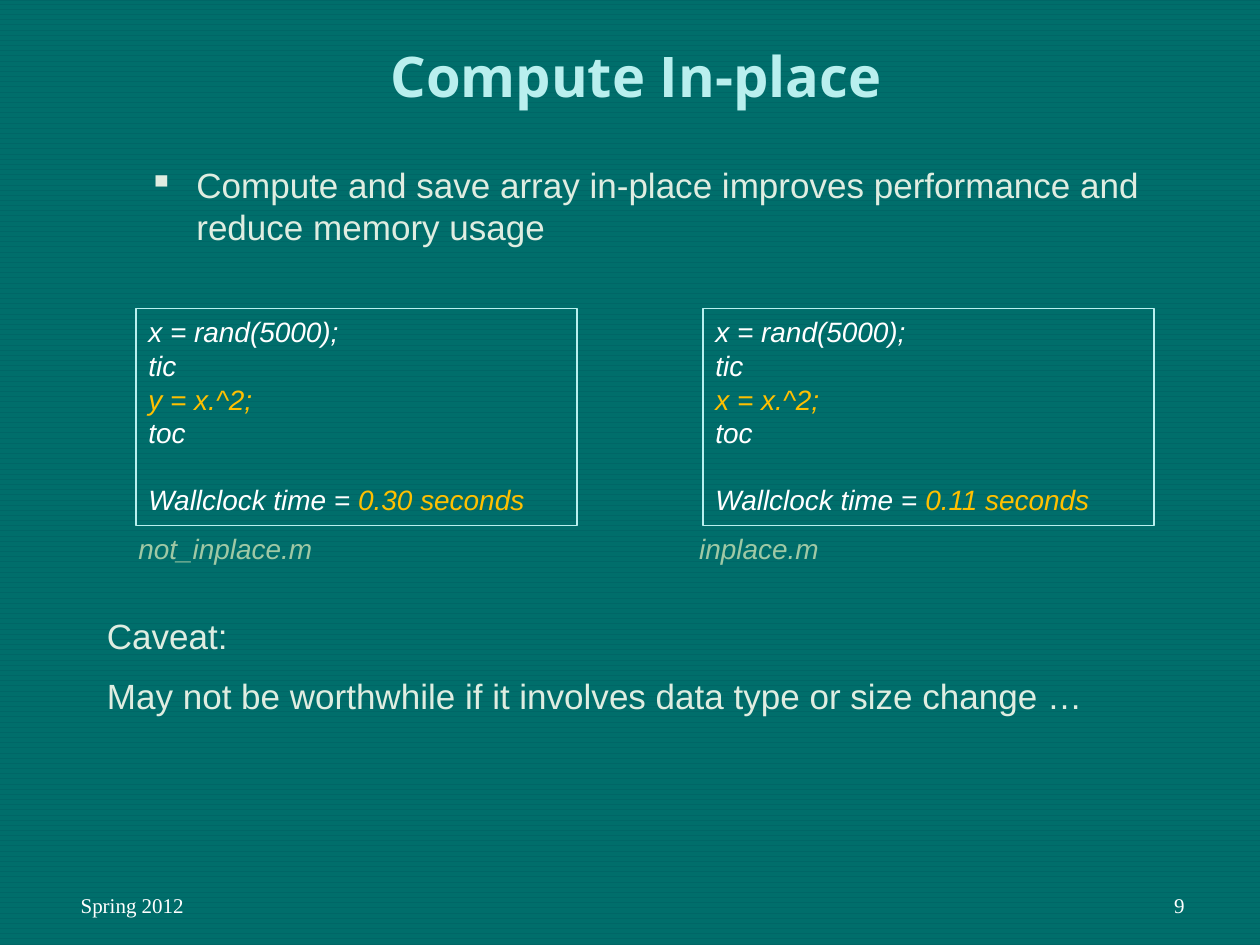
from pptx import Presentation
from pptx.dml.color import RGBColor
from pptx.enum.dml import MSO_PATTERN
from pptx.enum.shapes import MSO_SHAPE
from pptx.enum.text import MSO_ANCHOR, PP_ALIGN
from pptx.oxml.ns import qn
from pptx.util import Inches, Pt
from lxml.etree import SubElement

COLORS = {
    "stripe": "006E6B", "ground": "006666", "title": "B9EFEE", "body": "DFEDE1",
    "code": "FFFFFF", "accent": "FFC000", "caption": "9FC8A5",
}


def rgb(name):
    return RGBColor.from_string(COLORS[name])


def set_font(target, size, color, name="Arial", bold=False, italic=False):
    font = target.font
    font.size, font.name = Pt(size), name
    font.bold, font.italic = bold, italic
    font.color.rgb = rgb(color)


def add_frame(slide, left, top, width, height, anchor=MSO_ANCHOR.TOP):
    """Add a wrapping text box and return its text frame."""
    box = slide.shapes.add_textbox(Inches(left), Inches(top), Inches(width), Inches(height))
    frame = box.text_frame
    frame.word_wrap = True
    frame.vertical_anchor = anchor
    return frame


def add_title(slide, left, top, width, height):
    title = add_frame(slide, left, top, width, height).paragraphs[0]
    title.text = "Compute In-place"
    set_font(title, 32, "title", "Open Sans", bold=True)


def add_key_point(slide, left, top, width, height):
    point = add_frame(slide, left, top, width, height).paragraphs[0]
    point.text = "Compute and save array in-place improves performance and reduce memory usage"
    props = point._p.get_or_add_pPr()
    indent = Inches(0.38)
    props.set("marL", str(indent))
    props.set("indent", str(-indent))
    bullet_color = SubElement(props, qn("a:buClr"))
    SubElement(bullet_color, qn("a:srgbClr"), val=COLORS["body"])
    SubElement(props, qn("a:buChar"), char="▪")
    set_font(point, 20, "body")


def add_code_panel(slide, left, top, width, height, statement, seconds):
    panel = slide.shapes.add_shape(
        MSO_SHAPE.RECTANGLE, Inches(left), Inches(top), Inches(width), Inches(height))
    panel.shadow.inherit = False
    panel.fill.background()
    panel.line.color.rgb = rgb("title")
    panel.line.width = Pt(0.75)
    frame = panel.text_frame
    frame.word_wrap = True
    frame.vertical_anchor = MSO_ANCHOR.TOP

    # Code lines, with the timed statement highlighted
    frame.text = "\n".join(["x = rand(5000);", "tic", statement, "toc"])
    for line in frame.paragraphs:
        line.alignment = PP_ALIGN.LEFT
        set_font(line, 16, "accent" if line.text == statement else "code", italic=True)

    # Timing result, one line below the code
    timing = frame.add_paragraph()
    timing.alignment = PP_ALIGN.LEFT
    timing.space_before = Pt(19)
    for text, color in (("Wallclock time = ", "code"), (seconds, "accent")):
        run = timing.add_run()
        run.text = text
        set_font(run, 16, color, italic=True)


def add_file_names(slide, left, top, width, height):
    names = add_frame(slide, left, top, width, height).paragraphs[0]
    names.text = "not_inplace.m\tinplace.m"
    tabs = SubElement(names._p.get_or_add_pPr(), qn("a:tabLst"))
    SubElement(tabs, qn("a:tab"), pos=str(Inches(4.45)), algn="l")
    set_font(names, 16, "caption", italic=True)


def add_caveat(slide, left, top, width, height):
    frame = add_frame(slide, left, top, width, height)
    frame.text = "Caveat:\nMay not be worthwhile if it involves data type or size change …"
    for line in frame.paragraphs:
        set_font(line, 20, "body")
    frame.paragraphs[1].space_before = Pt(10)


def add_footer(slide, left, top, width, height):
    part_width = 2.33
    parts = (
        (left, "Spring 2012", PP_ALIGN.LEFT),
        (left + width - part_width, "9", PP_ALIGN.RIGHT),
    )
    for part_left, text, alignment in parts:
        frame = add_frame(slide, part_left, top, part_width, height, MSO_ANCHOR.BOTTOM)
        frame.margin_left = Inches(0.14)
        entry = frame.paragraphs[0]
        entry.text = text
        entry.alignment = alignment
        set_font(entry, 12, "code", "Times New Roman")


def main():
    deck = Presentation()
    deck.slide_width, deck.slide_height = Inches(10), Inches(7.5)
    slide = deck.slides.add_slide(deck.slide_layouts[6])

    # Striped background
    ground = slide.background.fill
    ground.patterned()
    ground.pattern = MSO_PATTERN.DARK_HORIZONTAL
    ground.fore_color.rgb = rgb("stripe")
    ground.back_color.rgb = rgb("ground")

    add_footer(slide, 0.5, 6.83, 9, 0.5)
    add_key_point(slide, 1.08, 1.25, 8.25, 0.83)
    add_title(slide, 3, 0.28, 4.5, 0.63)
    add_code_panel(slide, 1.08, 2.45, 3.5, 1.72, "y = x.^2;", "0.30 seconds")
    add_code_panel(slide, 5.58, 2.45, 3.58, 1.72, "x = x.^2;", "0.11 seconds")
    add_caveat(slide, 0.75, 4.83, 8.25, 0.94)
    add_file_names(slide, 1, 4.17, 6.29, 0.37)

    deck.save("out.pptx")


if __name__ == "__main__":
    main()
